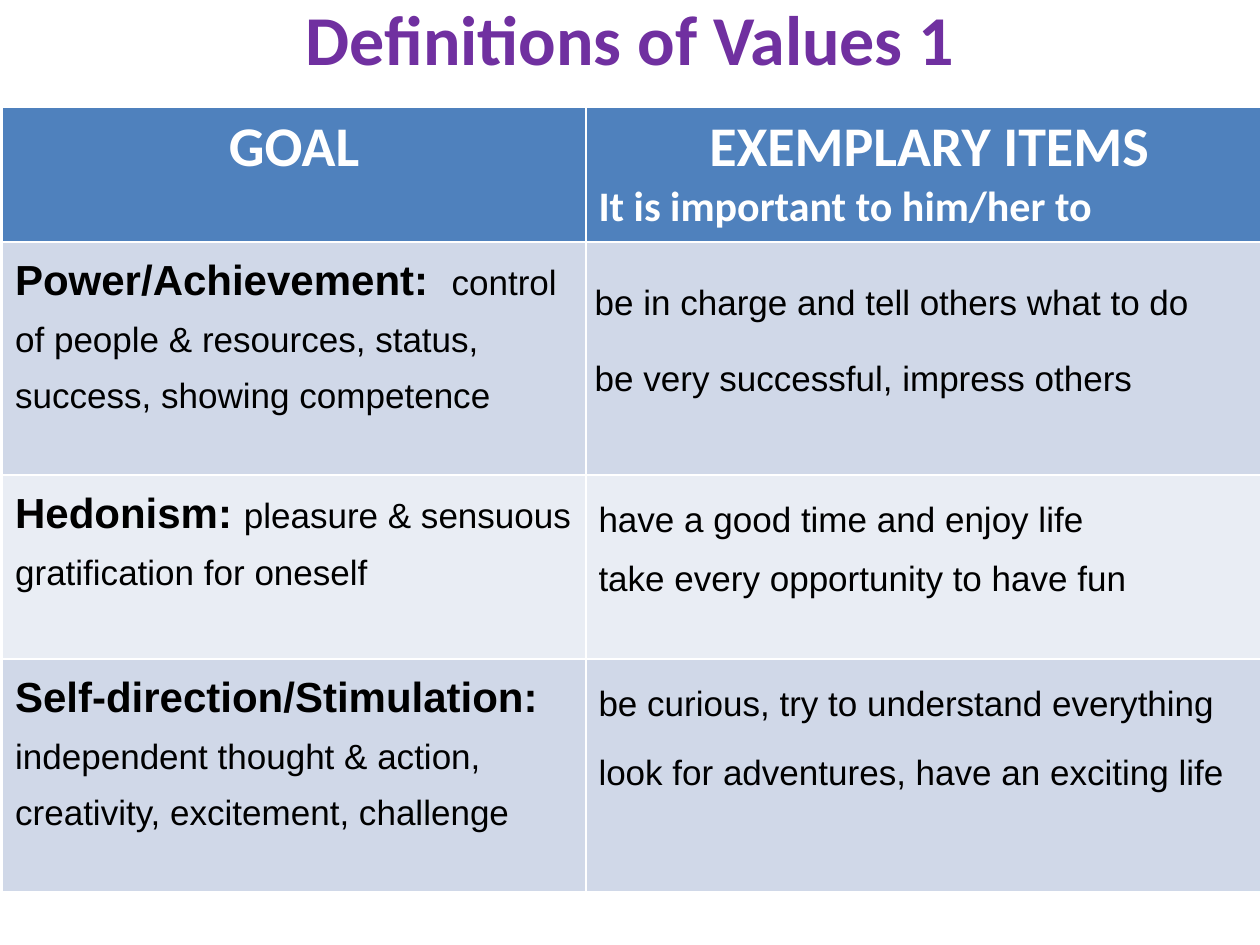
from pptx import Presentation
from pptx.dml.color import RGBColor
from pptx.enum.text import MSO_ANCHOR, PP_ALIGN
from pptx.util import Inches, Pt

PURPLE = RGBColor(0x70, 0x30, 0xA0)
WHITE = RGBColor(0xFF, 0xFF, 0xFF)
BLACK = RGBColor(0x00, 0x00, 0x00)
HEADER_BLUE = RGBColor(0x4F, 0x81, 0xBD)
BANDS = [RGBColor(0xD0, 0xD8, 0xE8), RGBColor(0xE9, 0xED, 0xF4)]

COLUMNS = [4.63, 5.45]
HEADER_ROW = 1.07
TALL_ROW, SHORT_ROW = 1.85, 1.46
ROWS = [HEADER_ROW, TALL_ROW, SHORT_ROW, TALL_ROW]

# Value name, its goal, and its items as (text, space before, space after)
VALUES = [
    ("Power/Achievement:  ",
     "control of people & resources, status, success, showing competence",
     [("be in charge and tell others what to do", 0, 6),
      ("be very successful, impress others", 4, 2)]),
    ("Hedonism: ",
     "pleasure & sensuous gratification for oneself",
     [("have a good time and enjoy life", 0, 0),
      ("take every opportunity to have fun", 0, 0)]),
    ("Self-direction/Stimulation: ",
     "independent thought & action, creativity, excitement, challenge",
     [("be curious, try to understand everything", 0, 6),
      ("look for adventures, have an exciting life", 0, 0)]),
]


def add_text(paragraph, text, size=20, font="Arial", color=BLACK, bold=False,
             align=PP_ALIGN.LEFT, spacing=None, before=0, after=0):
    """Append a run to the paragraph and format both."""
    paragraph.alignment = align
    paragraph.line_spacing = spacing
    paragraph.space_before, paragraph.space_after = Pt(before), Pt(after)
    run = paragraph.add_run()
    run.text = text
    run.font.size, run.font.name, run.font.bold = Pt(size), font, bold
    run.font.color.rgb = color


presentation = Presentation()
presentation.slide_width, presentation.slide_height = Inches(10), Inches(7.5)
slide = presentation.slides.add_slide(presentation.slide_layouts[6])

# Title
title = slide.shapes.add_textbox(Inches(0.5), Inches(-0.33), Inches(9), Inches(1.25))
title.text_frame.word_wrap = True
title.text_frame.vertical_anchor = MSO_ANCHOR.MIDDLE
add_text(title.text_frame.paragraphs[0], "Definitions of Values 1", size=40,
         font="Calibri", color=PURPLE, bold=True, align=PP_ALIGN.CENTER)

# Table grid
table = slide.shapes.add_table(
    len(ROWS), len(COLUMNS), Inches(0.02), Inches(0.85),
    Inches(sum(COLUMNS)), Inches(sum(ROWS))).table
for column, width in zip(table.columns, COLUMNS):
    column.width = Inches(width)
for row, height in zip(table.rows, ROWS):
    row.height = Inches(height)

# Header row
header_style = dict(font="Calibri", color=WHITE, bold=True)
for cell, heading in zip(table.rows[0].cells, ["GOAL", "EXEMPLARY ITEMS"]):
    cell.fill.solid()
    cell.fill.fore_color.rgb = HEADER_BLUE
    add_text(cell.text_frame.paragraphs[0], heading, size=32,
             align=PP_ALIGN.CENTER, **header_style)
add_text(table.cell(0, 1).text_frame.add_paragraph(),
         "It is important to him/her to", size=24, **header_style)

# One row per value
for index, (name, goal, items) in enumerate(VALUES):
    goal_cell, items_cell = table.rows[index + 1].cells
    for cell in (goal_cell, items_cell):
        cell.fill.solid()
        cell.fill.fore_color.rgb = BANDS[index % 2]

    goal_paragraph = goal_cell.text_frame.paragraphs[0]
    add_text(goal_paragraph, name, size=24, bold=True, spacing=Pt(32))
    add_text(goal_paragraph, goal, spacing=Pt(32))

    frame = items_cell.text_frame
    for position, (item, before, after) in enumerate(items):
        paragraph = frame.add_paragraph() if position else frame.paragraphs[0]
        add_text(paragraph, item, spacing=1.5, before=before, after=after)

# The first items start lower and slightly further left
first_items = table.cell(1, 1)
first_items.margin_left = first_items.margin_right = Inches(0.07)
first_items.margin_top, first_items.margin_bottom = Inches(0.18), 0

presentation.save("out.pptx")
